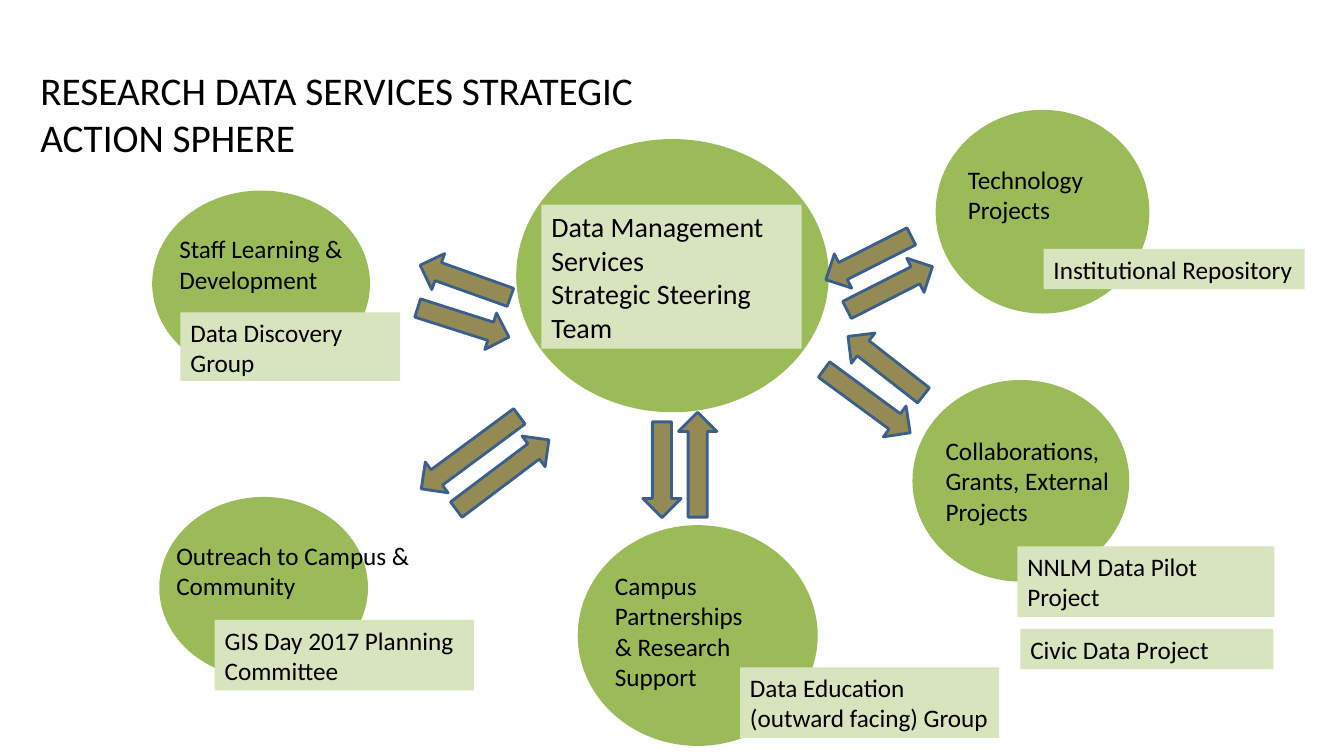
"""Build the strategic action sphere slide."""
from dataclasses import dataclass

from pptx import Presentation
from pptx import util as u
from pptx.dml.color import RGBColor
from pptx.enum import shapes, text


@dataclass(frozen=True)
class Theme:
    """Colours, font and type sizes of the slide."""
    circle: str = "9BBB59"
    label: str = "D7E4BD"
    arrow: str = "948A54"
    outline: str = "3A5F8C"
    ink: str = "000000"
    font: str = "Calibri"
    title: int = 28
    center: int = 20
    body: int = 18


THEME = Theme()

SPHERES = [
    ((1.51, 1.89, 2.16, 1.85), ("Staff Learning & Development", (0.17, 0.38, 2.51, 0.7)),
     [("Data Discovery Group", (0.28, 1.21, 2.18, 0.68))]),
    ((5.73, 5.21, 2.38, 2.19), ("Campus Partnerships & Research Support", (0.27, 0.4, 1.58, 0.7)),
     [("Data Education (outward facing) Group", (1.61, 1.41, 2.57, 0.7))]),
    ((9.05, 3.77, 2.15, 2), ("Collaborations,\nGrants, External Projects", (0.23, 0.5, 2.51, 0.7)),
     [("NNLM Data Pilot Project", (1.04, 1.65, 2.55, 0.7)),
      ("Civic Data Project", (1.07, 2.47, 2.51, 0.4))]),
    ((9.28, 1.09, 2.12, 2.02), ("Technology\nProjects", (0.22, 0.49, 2.51, 0.7)),
     [("Institutional Repository", (1.07, 1.38, 2.59, 0.4))]),
    ((1.58, 4.93, 2.07, 1.8), ("Outreach to Campus & Community", (0.07, 0.38, 2.51, 0.4)),
     [("GIS Day 2017 Planning Committee", (0.55, 1.22, 2.57, 0.7))]),
]

ARROW_HEIGHT = 0.38
ARROWS = [
    (4.12, 3.01, 0.95, 17.7), (4.14, 2.6, 0.95, 199.6),
    (4.06, 4.3, 1.21, 143.5), (4.41, 4.52, 1.15, 323),
    (8.35, 2.67, 0.95, 333.1), (8.14, 2.37, 0.95, 153.1),
    (8.07, 3.79, 1.06, 36.3), (8.31, 3.44, 0.95, 218),
    (6.4, 4.42, 1.04, 270), (6.09, 4.47, 0.95, 90),
]


def inches(box):
    """Convert a box of numbers to lengths."""
    return [u.Inches(value) for value in box]


def inside(box, offset):
    """Place an offset box relative to the corner of another box."""
    return box[0] + offset[0], box[1] + offset[1], offset[2], offset[3]


def write(shape, words, size):
    """Set left-aligned wrapped text in a shape and format its runs."""
    frame = shape.text_frame
    frame.text = words
    frame.word_wrap = True
    frame.auto_size = text.MSO_AUTO_SIZE.NONE
    frame.vertical_anchor = text.MSO_ANCHOR.TOP
    for paragraph in frame.paragraphs:
        paragraph.alignment = text.PP_ALIGN.LEFT
        for run in paragraph.runs:
            run.font.size = u.Pt(size)
            run.font.name = THEME.font
            run.font.color.rgb = RGBColor.from_string(THEME.ink)


def add_filled(slide, kind, box, color):
    """Add a flat preset shape without an outline."""
    shape = slide.shapes.add_shape(kind, *inches(box))
    shape.shadow.inherit = False
    shape.fill.solid()
    shape.fill.fore_color.rgb = RGBColor.from_string(color)
    shape.line.fill.background()
    return shape


def add_label(slide, box, words, size=THEME.body):
    """Add a pale rectangle with text."""
    label = add_filled(slide, shapes.MSO_SHAPE.RECTANGLE, box, THEME.label)
    write(label, words, size)


def add_title(slide, box):
    """Move and format the title placeholder."""
    title = slide.shapes.title
    title.left, title.top, title.width, title.height = inches(box)
    write(title, "RESEARCH DATA SERVICES STRATEGIC\nACTION SPHERE", THEME.title)


def add_center(slide, box):
    """Add the steering team circle with its label."""
    add_filled(slide, shapes.MSO_SHAPE.OVAL, box, THEME.circle)
    add_label(slide, inside(box, (0.25, 0.65, 2.58, 1.43)),
              "Data Management Services\nStrategic Steering Team", THEME.center)


def add_sphere(slide, box, caption, labels):
    """Add an outer circle with its caption and group labels."""
    add_filled(slide, shapes.MSO_SHAPE.OVAL, box, THEME.circle)
    words, offset = caption
    write(slide.shapes.add_textbox(*inches(inside(box, offset))), words, THEME.body)
    for words, offset in labels:
        add_label(slide, inside(box, offset), words)


def add_arrow(slide, box, rotation):
    """Add a rotated block arrow."""
    arrow = add_filled(slide, shapes.MSO_SHAPE.RIGHT_ARROW, box, THEME.arrow)
    arrow.line.color.rgb = RGBColor.from_string(THEME.outline)
    arrow.line.width = u.Pt(2)
    arrow.rotation = rotation


def main():
    """Build and save the presentation."""
    presentation = Presentation()
    presentation.slide_width = u.Inches(13.33)
    presentation.slide_height = u.Inches(7.5)
    slide = presentation.slides.add_slide(presentation.slide_layouts[5])
    add_title(slide, (0.3, 0.61, 8.18, 1.03))
    add_center(slide, (5.12, 1.38, 3.1, 2.71))
    for box, caption, labels in SPHERES:
        add_sphere(slide, box, caption, labels)
    for left, top, width, rotation in ARROWS:
        add_arrow(slide, (left, top, width, ARROW_HEIGHT), rotation)
    presentation.save("out.pptx")


if __name__ == "__main__":
    main()
